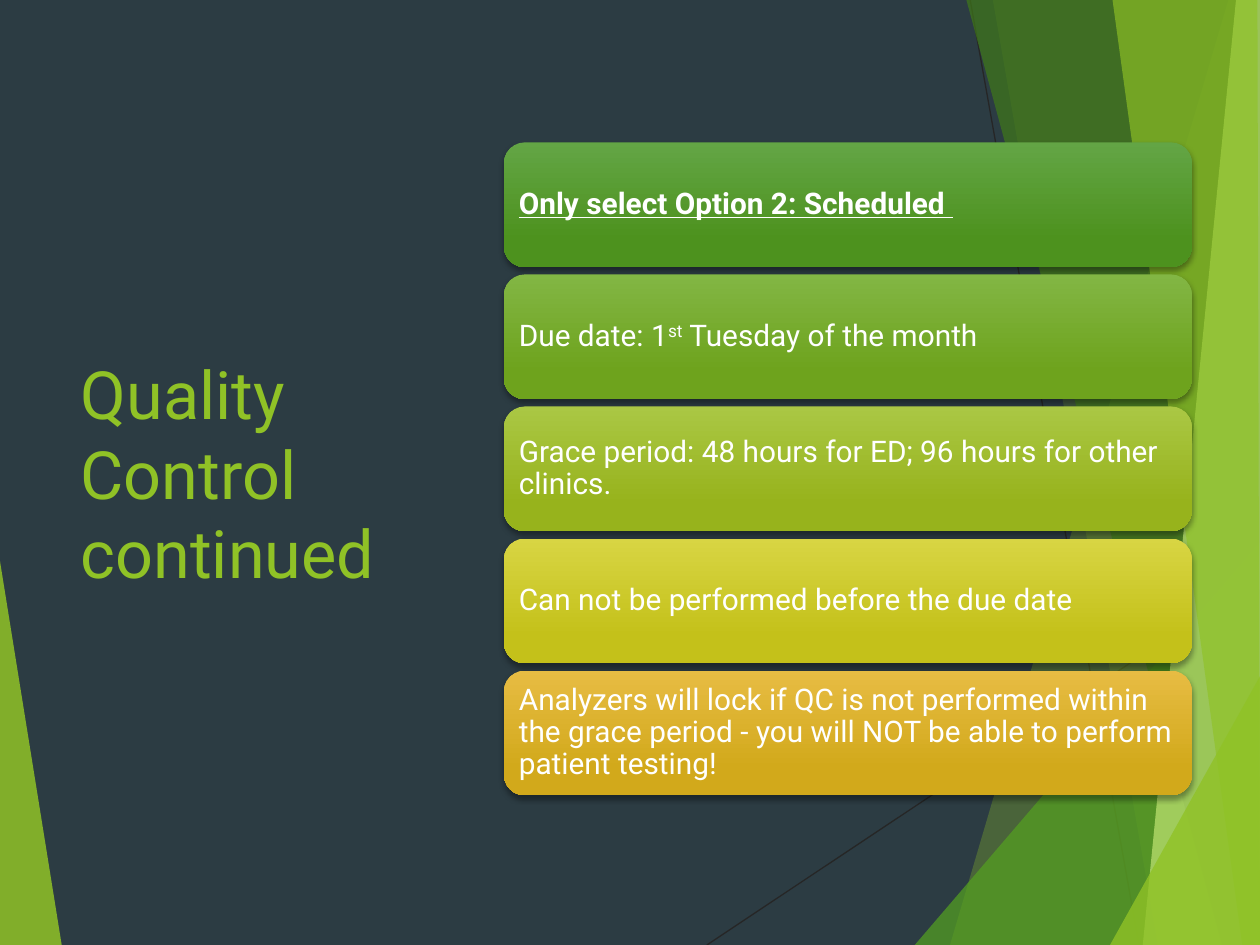
from lxml.etree import SubElement as Sub
from pptx import Presentation
from pptx.dml.color import RGBColor as RGB
from pptx.enum.shapes import MSO_CONNECTOR as LINK, MSO_SHAPE as SHAPE
from pptx.enum.text import MSO_ANCHOR as ANCHOR, MSO_AUTO_SIZE as FIT, PP_ALIGN as ALIGN
from pptx.oxml.ns import qn
from pptx.util import Inches, Pt

DARK = RGB(0x2C, 0x3C, 0x43)
LINE = RGB(0x26, 0x26, 0x26)
LIME = RGB(0x90, 0xC2, 0x26)
GREEN = RGB(0x54, 0xA0, 0x21)
MOSS = RGB(0x3F, 0x78, 0x19)
PALE = RGB(0xC0, 0xE4, 0x74)
WHITE = RGB(0xFF, 0xFF, 0xFF)


def write(par, text, size=17, color=WHITE, bold=False, under=False, base=0):
    run = par.add_run()
    run.text = text
    font = run.font
    font.name, font.size, font.color.rgb = "Roboto", Pt(size), color
    font.bold, font.underline = bold, under
    if base:
        run._r.get_or_add_rPr().set("baseline", str(base * 1000))


deck = Presentation()
deck.slide_width, deck.slide_height = Inches(10), Inches(7.5)
slide = deck.slides.add_slide(deck.slide_layouts[5])
slide.background.fill.solid()
slide.background.fill.fore_color.rgb = DARK
shapes = slide.shapes

# Thin lines behind the facets
for ends in [(5.61, 7.5, 10.01, 4.57), (7.7, 0, 9.04, 7.5)]:
    link = shapes.add_connector(LINK.STRAIGHT, *map(Inches, ends))
    link.line.color.rgb, link.line.width = LINE, Pt(0.75)
    Sub(link._element.spPr, qn("a:effectLst"))

# Translucent facets: colour, opacity in percent, corners
facets = [
    (LIME, 85, [(-0.01, 4.39), (0.49, 7.5), (-0.01, 7.5)]),
    (LIME, 30, [(9.75, 0), (7.54, 7.5), (10.01, 7.5), (10.01, 0)]),
    (LIME, 20, [(7.88, 0), (9.19, 7.5), (10.01, 7.5), (10.01, 0)]),
    (GREEN, 72, [(7.26, 7.5), (10.01, 4.29), (10.01, 7.5)]),
    (MOSS, 70, [(7.67, 0), (9.7, 7.5), (10.01, 7.5), (10.01, 0)]),
    (PALE, 70, [(9.81, 0), (9.07, 7.5), (10.01, 7.5), (10.01, 0)]),
    (LIME, 65, [(8.83, 0), (9.86, 7.5), (10, 7.5), (9.98, 0)]),
    (LIME, 80, [(8.81, 7.5), (10.01, 5.35), (10.01, 7.5)]),
]
for color, alpha, corners in facets:
    start, *rest = [(Inches(x), Inches(y)) for x, y in corners]
    pen = shapes.build_freeform(*start)
    pen.add_line_segments(rest)
    facet = pen.convert_to_shape()
    facet.shadow.inherit = False
    facet.line.fill.background()
    facet.fill.solid()
    facet.fill.fore_color.rgb = color
    tone = facet._element.spPr.find(".//" + qn("a:srgbClr"))
    Sub(tone, qn("a:alpha"), val=str(alpha * 1000))

# Title, raised above the facets
title = shapes.title
shapes._spTree.append(title._element)
title.left, title.top = Inches(0.54), Inches(1.51)
title.width, title.height = Inches(2.91), Inches(4.48)
frame = title.text_frame
frame.word_wrap, frame.auto_size = True, FIT.NONE
frame.vertical_anchor = ANCHOR.MIDDLE
frame.paragraphs[0].alignment = ALIGN.LEFT
write(frame.paragraphs[0], "Quality Control continued", size=38, color=LIME)

# Stack of cards: top colour, bottom colour, runs of text
cards = [
    ("63A545", "4D921E", [("Only select Option 2: Scheduled ", dict(bold=True, under=True))]),
    ("82B644", "6EA31D", [("Due date: 1", {}), ("st", dict(base=30)),
                          (" Tuesday of the month", {})]),
    ("AAC744", "97B31C", [("Grace period: 48 hours for ED; 96 hours for other clinics.", {})]),
    ("D8D543", "C4C11A", [("Can not be performed before the due date", {})]),
    ("E7BC43", "D2A91B", [("Analyzers will lock if QC is not performed within the grace "
                           "period - you will NOT be able to perform patient testing!", {})]),
]
for row, (light, deep, runs) in enumerate(cards):
    card = shapes.add_shape(SHAPE.ROUNDED_RECTANGLE, Inches(4), Inches(1.13 + 1.048 * row),
                            Inches(5.46), Inches(0.99))
    card.line.fill.background()
    card.fill.gradient()
    card.fill.gradient_angle = 270
    for stop, spot, tint in zip(card.fill.gradient_stops, (0, 0.78), (light, deep)):
        stop.position, stop.color.rgb = spot, RGB.from_string(tint)

    card.shadow.inherit = False
    glow = Sub(card._element.spPr.find(qn("a:effectLst")), qn("a:outerShdw"),
               blurRad=str(Pt(3)), dist=str(Pt(2)), dir="5400000", rotWithShape="0")
    Sub(Sub(glow, qn("a:srgbClr"), val="000000"), qn("a:alpha"), val="35000")

    frame = card.text_frame
    frame.word_wrap, frame.vertical_anchor = True, ANCHOR.MIDDLE
    frame.margin_left = frame.margin_right = Inches(0.07)
    frame.margin_top = frame.margin_bottom = Inches(0.07)
    par = frame.paragraphs[0]
    par.alignment, par.line_spacing = ALIGN.LEFT, 0.9
    for text, look in runs:
        write(par, text, **look)

deck.save("out.pptx")
